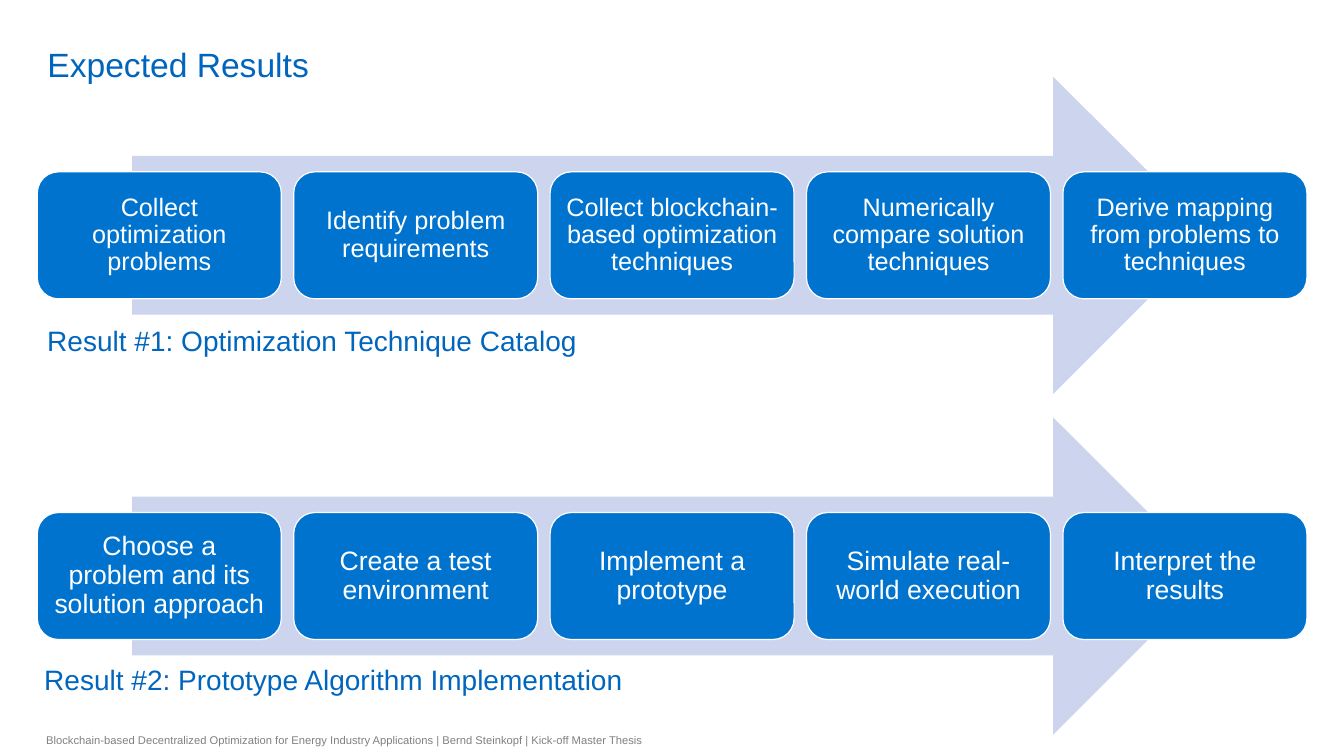
"""Build the Expected Results slide with two five-step process arrows."""
from pptx import Presentation
from pptx.dml.color import RGBColor
from pptx.enum.shapes import MSO_SHAPE
from pptx.enum.text import MSO_ANCHOR, PP_ALIGN
from pptx.util import Inches, Pt

TITLE = "Expected Results"
FOOTER = ("Blockchain-based Decentralized Optimization for Energy Industry Applications"
          " | Bernd Steinkopf | Kick-off Master Thesis")
PROCESSES = [
    {"top": 0.76, "size": 18, "inset": 0.07,
     "steps": ["Collect optimization problems",
               "Identify problem requirements",
               "Collect blockchain-based optimization techniques",
               "Numerically compare solution techniques",
               "Derive mapping from problems to techniques"],
     "result": "Result #1: Optimization Technique Catalog",
     "result_box": (0.37, 3.2, 11.58, 0.34)},
    {"top": 4.14, "size": 19, "inset": 0.08,
     "steps": ["Choose a problem and its solution approach",
               "Create a test environment",
               "Implement a prototype",
               "Simulate real-world execution",
               "Interpret the results"],
     "result": "Result #2: Prototype Algorithm Implementation",
     "result_box": (0.34, 6.57, 6.98, 0.34)},
]
HEADING_BLUE, STEP_BLUE, ARROW_BLUE = "0065BD", "0073CF", "CCD5ED"
WHITE, GREY = "FFFFFF", "808080"
ARROW_LEFT, ARROW_WIDTH, ARROW_HEIGHT = 1.31, 10.71, 3.15
STEP_LEFT, STEP_PITCH, STEP_WIDTH, STEP_HEIGHT = 0.37, 2.543, 2.42, 1.26


def color(value):
    return RGBColor.from_string(value)


def write(holder, text, size, ink, anchor, insets, align=PP_ALIGN.LEFT, spacing=1.0):
    frame = holder.text_frame
    frame.word_wrap = True
    frame.vertical_anchor = anchor
    frame.margin_left = frame.margin_right = Inches(insets[0])
    frame.margin_top = frame.margin_bottom = Inches(insets[1])
    paragraph = frame.paragraphs[0]
    paragraph.text = text
    paragraph.alignment = align
    paragraph.line_spacing = spacing
    paragraph.font.size = Pt(size)
    paragraph.font.name = "Arial"
    paragraph.font.color.rgb = color(ink)


def add_block(slide, preset, box, fill):
    block = slide.shapes.add_shape(preset, *map(Inches, box))
    block.shadow.inherit = False
    block.fill.solid()
    block.fill.fore_color.rgb = color(fill)
    block.line.fill.background()
    return block


def add_label(slide, text, box, size, ink, anchor, insets):
    label = slide.shapes.add_textbox(*map(Inches, box))
    write(label, text, size, ink, anchor, insets)


def add_process(slide, process):
    top = process["top"]
    add_block(slide, MSO_SHAPE.RIGHT_ARROW,
              (ARROW_LEFT, top, ARROW_WIDTH, ARROW_HEIGHT), ARROW_BLUE)
    step_top = top + (ARROW_HEIGHT - STEP_HEIGHT) / 2
    for index, text in enumerate(process["steps"]):
        step = add_block(slide, MSO_SHAPE.ROUNDED_RECTANGLE,
                         (STEP_LEFT + index * STEP_PITCH, step_top, STEP_WIDTH, STEP_HEIGHT),
                         STEP_BLUE)
        step.line.color.rgb = color(WHITE)
        step.line.width = Pt(0.85)
        write(step, text, process["size"], WHITE, MSO_ANCHOR.MIDDLE,
              (process["inset"], process["inset"]), PP_ALIGN.CENTER, 0.9)
    add_label(slide, process["result"], process["result_box"], 20, HEADING_BLUE,
              MSO_ANCHOR.BOTTOM, (0.1, 0))


def main():
    deck = Presentation()
    deck.slide_width, deck.slide_height = Inches(13.33), Inches(7.5)
    slide = deck.slides.add_slide(deck.slide_layouts[5])
    title = slide.shapes.title
    title.left, title.top, title.width, title.height = map(Inches, (0.37, 0.05, 11.58, 0.79))
    write(title, TITLE, 24, HEADING_BLUE, MSO_ANCHOR.BOTTOM, (0.1, 0))
    for process in PROCESSES:
        add_process(slide, process)
    add_label(slide, FOOTER, (0.36, 7.18, 6.3, 0.32), 8, GREY, MSO_ANCHOR.MIDDLE, (0.1, 0.05))
    deck.save("out.pptx")


if __name__ == "__main__":
    main()
